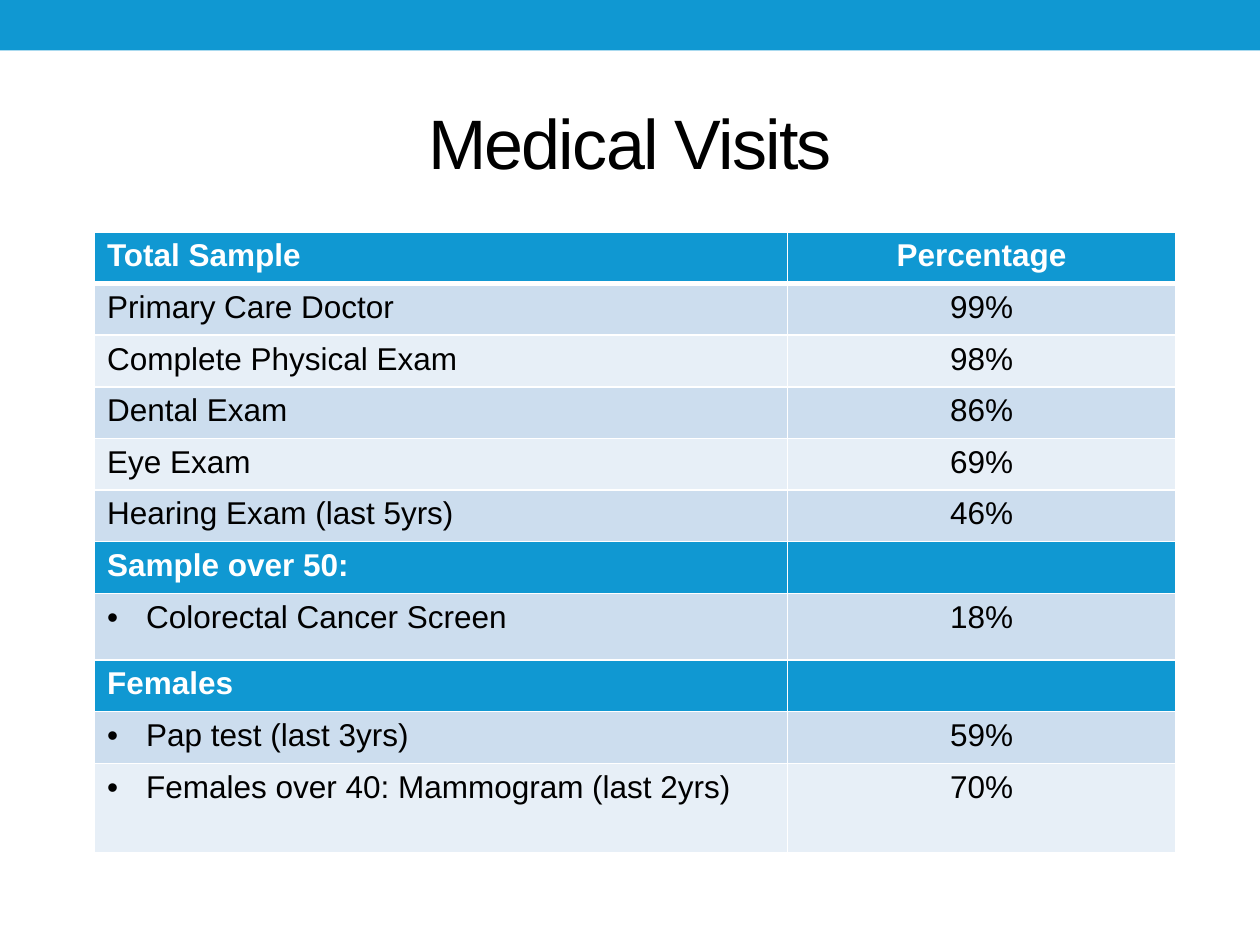
from dataclasses import dataclass

from lxml import etree
from pptx import Presentation
from pptx import util as u
from pptx.dml.color import RGBColor
from pptx.enum import shapes, text
from pptx.oxml import ns


@dataclass(frozen=True)
class Theme:
    font: str = "Arial"
    blue: str = "1098D2"
    bands: tuple = ("E7EFF7", "CCDDEE")
    dark: str = "000000"
    light: str = "FFFFFF"
    title_size: int = 40
    table_size: int = 18


THEME = Theme()
LEFT, CENTER = text.PP_ALIGN.LEFT, text.PP_ALIGN.CENTER

# Kind of row, label, value
ROWS = [
    ("heading", "Total Sample", "Percentage"),
    ("plain", "Primary Care Doctor", "99%"),
    ("plain", "Complete Physical Exam", "98%"),
    ("plain", "Dental Exam", "86%"),
    ("plain", "Eye Exam", "69%"),
    ("plain", "Hearing Exam (last 5yrs)", "46%"),
    ("heading", "Sample over 50:", ""),
    ("bullet", "Colorectal Cancer Screen", "18%"),
    ("heading", "Females", ""),
    ("bullet", "Pap test (last 3yrs)", "59%"),
    ("bullet", "Females over 40: Mammogram (last 2yrs)", "70%"),
]
COLUMN_WIDTHS = (5.5, 3.08)
ROW_HEIGHT = 0.41
TALL_ROWS = {7: 0.53, 10: 0.71}


def add_element(parent, tag, **attributes):
    element = etree.SubElement(parent, ns.qn(tag))
    for name, value in attributes.items():
        element.set(name, str(value))
    return element


def write_text(frame, words, size=THEME.table_size, color=THEME.dark,
               bold=False, align=LEFT, spacing=0, bullet=False):
    paragraph = frame.paragraphs[0]
    paragraph.alignment = align
    paragraph.font.size = u.Pt(size)
    if bullet:
        properties = paragraph._p.get_or_add_pPr()
        indent = u.Inches(0.31)
        properties.set("marL", str(indent))
        properties.set("indent", str(-indent))
        bullet_font = etree.Element(ns.qn("a:buFont"), typeface=THEME.font)
        properties.insert(0, bullet_font)
        bullet_font.addnext(etree.Element(ns.qn("a:buChar"), char="•"))
    if not words:
        return
    run = paragraph.add_run()
    run.text = words
    run.font.name = THEME.font
    run.font.size = u.Pt(size)
    run.font.bold = bold
    run.font.color.rgb = RGBColor.from_string(color)
    if spacing:
        run._r.get_or_add_rPr().set("spc", str(spacing * 100))


def add_banner(slide, width):
    banner = slide.shapes.add_shape(
        shapes.MSO_SHAPE.RECTANGLE, 0, 0, width, u.Inches(0.4))
    banner.shadow.inherit = False
    banner.fill.solid()
    banner.fill.fore_color.rgb = RGBColor.from_string(THEME.blue)
    banner.line.fill.background()


def set_title(slide, words):
    title = slide.shapes.title
    title.left, title.top = u.Inches(0.5), u.Inches(0.58)
    title.width, title.height = u.Inches(9), u.Inches(1.08)
    title.text_frame.auto_size = text.MSO_AUTO_SIZE.NONE
    title.text_frame.vertical_anchor = text.MSO_ANCHOR.MIDDLE
    write_text(title.text_frame, words, size=THEME.title_size,
               align=CENTER, spacing=-1)


def set_borders(cell, top=1, bottom=1):
    widths = {"a:lnL": 1, "a:lnR": 1, "a:lnT": top, "a:lnB": bottom}
    properties = cell._tc.get_or_add_tcPr()
    for tag, width in widths.items():
        line = add_element(properties, tag, w=u.Pt(width))
        fill = add_element(line, "a:solidFill")
        add_element(fill, "a:srgbClr", val=THEME.light)


def fill_cell(cell, words, fill, top, bottom, **text_format):
    # Borders precede the fill in the cell properties
    set_borders(cell, top, bottom)
    cell.fill.solid()
    cell.fill.fore_color.rgb = RGBColor.from_string(fill)
    write_text(cell.text_frame, words, **text_format)


def add_visits_table(slide):
    heights = [TALL_ROWS.get(i, ROW_HEIGHT) for i in range(len(ROWS))]
    table = slide.shapes.add_table(
        len(ROWS), len(COLUMN_WIDTHS), u.Inches(0.75), u.Inches(1.84),
        u.Inches(sum(COLUMN_WIDTHS)), u.Inches(sum(heights))).table
    for column, width in zip(table.columns, COLUMN_WIDTHS):
        column.width = u.Inches(width)

    for index, (kind, label, value) in enumerate(ROWS):
        table.rows[index].height = u.Inches(heights[index])
        heading = kind == "heading"
        row_format = {
            "fill": THEME.blue if heading else THEME.bands[index % 2],
            "color": THEME.light if heading else THEME.dark,
            "bold": heading,
            "top": 3 if index == 1 else 1,
            "bottom": 3 if index == 0 else 1,
        }
        fill_cell(table.cell(index, 0), label,
                  bullet=kind == "bullet", **row_format)
        fill_cell(table.cell(index, 1), value, align=CENTER, **row_format)


def main():
    presentation = Presentation()
    presentation.slide_width = u.Inches(10)
    presentation.slide_height = u.Inches(7.5)
    slide = presentation.slides.add_slide(presentation.slide_layouts[5])

    add_banner(slide, presentation.slide_width)
    set_title(slide, "Medical Visits")
    add_visits_table(slide)
    presentation.save("out.pptx")


if __name__ == "__main__":
    main()
